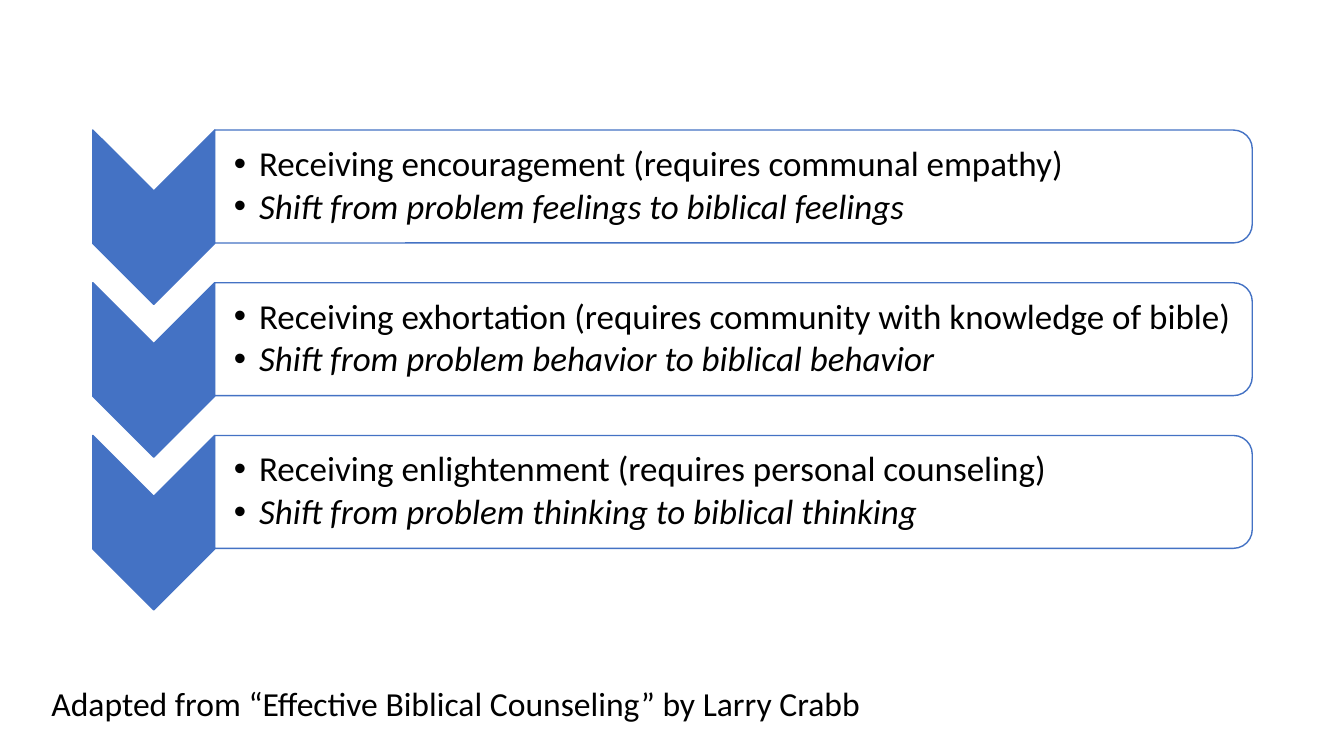
from dataclasses import dataclass

from lxml import etree
from pptx import Presentation
from pptx import util as u
from pptx.dml.color import RGBColor
from pptx.enum import shapes, text
from pptx.oxml.ns import qn


@dataclass(frozen=True)
class Theme:
    font: str = "Calibri"
    ink: RGBColor = RGBColor(0, 0, 0)
    accent: RGBColor = RGBColor(0x44, 0x72, 0xC4)
    panel: RGBColor = RGBColor(255, 255, 255)
    credit_size: int = 24
    step_size: int = 25


THEME = Theme()

CREDIT = "Adapted from “Effective Biblical Counseling” by Larry Crabb"
STEPS = [
    ("Receiving encouragement (requires communal empathy)",
     "Shift from problem feelings to biblical feelings"),
    ("Receiving exhortation (requires community with knowledge of bible)",
     "Shift from problem behavior to biblical behavior"),
    ("Receiving enlightenment (requires personal counseling)",
     "Shift from problem thinking to biblical thinking"),
]

# Step rows, in inches
FIRST_TOP = 1.29
PITCH = 3.03 / 2
CHEVRON_LEFT, CHEVRON_WIDTH, CHEVRON_HEIGHT = 0.92, 1.21, 1.73
PANEL_LEFT, PANEL_WIDTH, PANEL_HEIGHT = 2.13, 10.29, 1.12
LIST_WIDTH, LIST_HEIGHT = 10.24, 1.01


def set_all(target, values):
    for name, value in values.items():
        setattr(target, name, value)


def write_run(paragraph, wording, size, italic=False):
    run = paragraph.add_run()
    run.text = wording
    set_all(run.font, {"name": THEME.font, "size": u.Pt(size), "italic": italic})
    run.font.color.rgb = THEME.ink


def add_turned(slide, kind, left, top, width, height, fill):
    """Add a shape turned by 90 degrees that covers the given area."""
    x = left + (width - height) / 2
    y = top + (height - width) / 2
    turned = slide.shapes.add_shape(
        kind, u.Inches(x), u.Inches(y), u.Inches(height), u.Inches(width))
    turned.rotation = 90
    turned.shadow.inherit = False
    turned.fill.solid()
    turned.fill.fore_color.rgb = fill
    turned.line.color.rgb = THEME.accent
    turned.line.width = u.Pt(1)
    return turned


def make_translucent(panel, percent):
    color = panel.fill._xPr.find(qn("a:solidFill"))[0]
    etree.SubElement(color, qn("a:alpha"), val=str(percent * 1000))


def add_bullet(paragraph):
    properties = paragraph._p.get_or_add_pPr()
    set_indent = {"marL": u.Inches(0.25), "indent": -u.Inches(0.25)}
    for name, value in set_indent.items():
        properties.set(name, str(value))
    etree.SubElement(properties, qn("a:buFont"), typeface="Arial")
    etree.SubElement(properties, qn("a:buChar"), char="•")


def add_step_list(slide, top, lines):
    box = slide.shapes.add_textbox(
        u.Inches(PANEL_LEFT), u.Inches(top),
        u.Inches(LIST_WIDTH), u.Inches(LIST_HEIGHT))
    frame = box.text_frame
    inset = u.Inches(0.02)
    set_all(frame, {
        "word_wrap": True, "vertical_anchor": text.MSO_ANCHOR.MIDDLE,
        "margin_left": u.Inches(0.19), "margin_right": inset,
        "margin_top": inset, "margin_bottom": inset})
    for index, wording in enumerate(lines):
        paragraph = frame.add_paragraph() if index else frame.paragraphs[0]
        set_all(paragraph, {"line_spacing": 0.9, "space_after": u.Pt(3.5)})
        add_bullet(paragraph)
        write_run(paragraph, wording, THEME.step_size, italic=index == 1)


def add_step(slide, top, lines):
    add_turned(slide, shapes.MSO_SHAPE.CHEVRON, CHEVRON_LEFT, top,
               CHEVRON_WIDTH, CHEVRON_HEIGHT, THEME.accent)
    panel = add_turned(slide, shapes.MSO_SHAPE.ROUND_2_SAME_RECTANGLE, PANEL_LEFT, top,
                       PANEL_WIDTH, PANEL_HEIGHT, THEME.panel)
    make_translucent(panel, 90)
    add_step_list(slide, top + (PANEL_HEIGHT - LIST_HEIGHT) / 2, lines)


def add_credit(slide):
    credit = slide.shapes.title
    set_all(credit, {"left": u.Inches(0.41), "top": u.Inches(6.65),
                     "width": u.Inches(8.24), "height": u.Inches(0.7)})
    set_all(credit.text_frame, {
        "word_wrap": True, "auto_size": text.MSO_AUTO_SIZE.NONE,
        "vertical_anchor": text.MSO_ANCHOR.MIDDLE})
    paragraph = credit.text_frame.paragraphs[0]
    set_all(paragraph, {"alignment": text.PP_ALIGN.LEFT, "line_spacing": 0.9})
    write_run(paragraph, CREDIT, THEME.credit_size)


def main():
    deck = Presentation()
    set_all(deck, {"slide_width": u.Inches(13.33), "slide_height": u.Inches(7.5)})
    slide = deck.slides.add_slide(deck.slide_layouts[5])

    # Source line in the title placeholder
    add_credit(slide)

    # Three steps, top to bottom
    for row, lines in enumerate(STEPS):
        add_step(slide, FIRST_TOP + row * PITCH, lines)

    deck.save("out.pptx")


if __name__ == "__main__":
    main()
